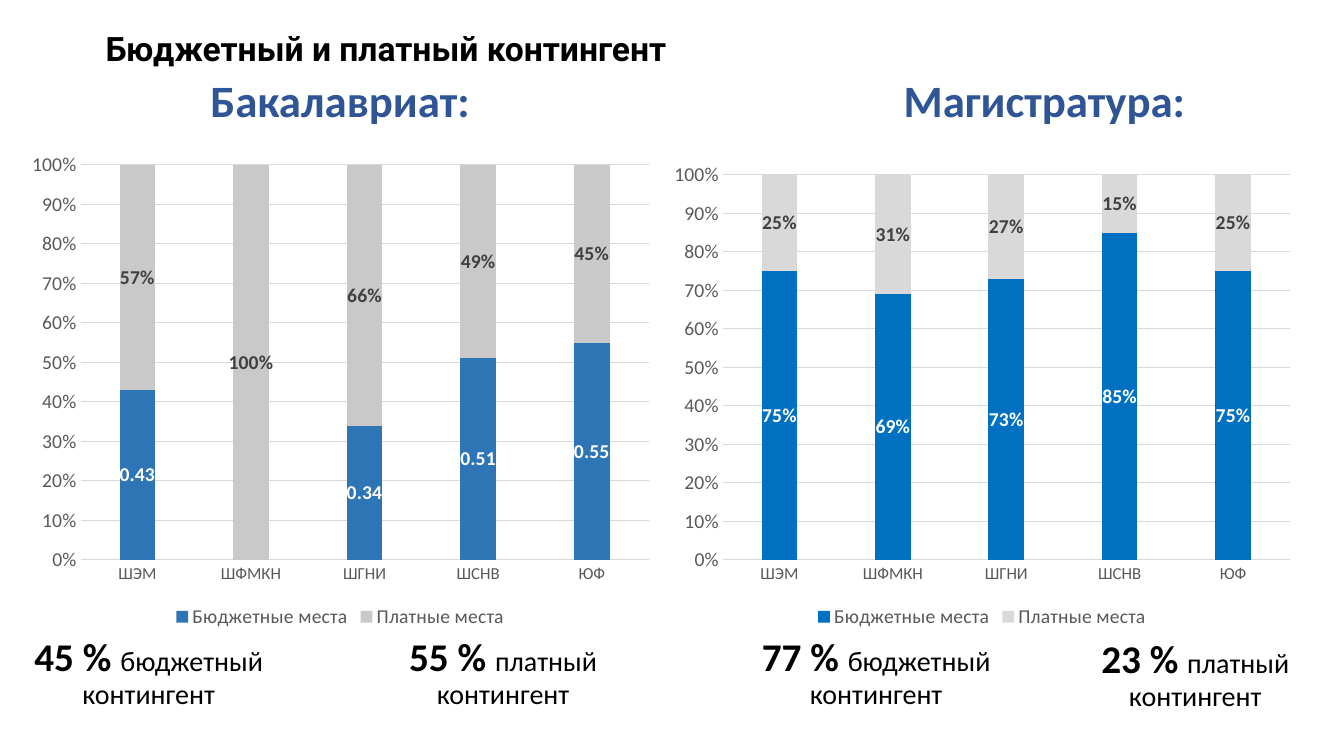
import pptx
import pptx.util
import pptx.chart.data
import pptx.dml.color
import pptx.enum.chart
import pptx.enum.text

HEADING = "Бюджетный и платный контингент"
SCHOOLS = ["ШЭМ", "ШФМКН", "ШГНИ", "ШСНВ", "ЮФ"]
SERIES = ["Бюджетные места", "Платные места"]
LEVELS = [
    {
        "title": "Бакалавриат:",
        "title_box": (1.9, 6, 63.7, 8.5),
        "chart_box": (1.9, 14.2, 63.7, 48.6),
        "budget": [0.43, 0, 0.34, 0.51, 0.55],
        "fills": ["2E75B6", "C9C9C9"],
        "formats": ["0.00;;;", "0%"],
        "totals": [
            ("45 % ", "бюджетный контингент", (0, 62.8, 29.5, 11)),
            ("55 % ", "платный контингент", (34.2, 62.8, 31.4, 11)),
        ],
    },
    {
        "title": "Магистратура:",
        "title_box": (74, 6, 59.2, 8.5),
        "chart_box": (65.6, 15.2, 63.6, 47.6),
        "budget": [0.75, 0.69, 0.73, 0.85, 0.75],
        "fills": ["0070C0", "D9D9D9"],
        "formats": ["0%", "0%"],
        "totals": [
            ("77 % ", "бюджетный контингент", (72.1, 62.8, 29.6, 11)),
            ("23 % ", "платный контингент", (104, 63, 29.1, 11)),
        ],
    },
]
HEADING_BOX = (9.5, 2.3, 88.7, 5)
CELL = 0.1

THEME = {
    "font": "Calibri", "heading_font": "Roboto",
    "text": "000000", "title": "2F5597", "axis": "595959", "grid": "D9D9D9",
    "labels": ["FFFFFF", "404040"],
    "heading_size": 24, "title_size": 32, "share_size": 28, "note_size": 20,
    "chart_size": 14, "category_size": 12,
}
ALIGN = pptx.enum.text.PP_ALIGN
ANCHOR = pptx.enum.text.MSO_ANCHOR


def place(box):
    return [pptx.util.Inches(n * CELL) for n in box]


def rgb(value):
    return pptx.dml.color.RGBColor.from_string(value)


def style(font, size, color, bold=False, name=THEME["font"]):
    font.size = pptx.util.Pt(size)
    font.name = name
    font.bold = bold
    font.color.rgb = rgb(color)


def grid_line(line):
    line.color.rgb = rgb(THEME["grid"])
    line.width = pptx.util.Pt(0.75)


def add_text(s, box, runs, align, anchor=ANCHOR.TOP, spacing=1.0, before=0):
    tf = s.shapes.add_textbox(*place(box)).text_frame
    tf.word_wrap = True
    tf.vertical_anchor = anchor
    p = tf.paragraphs[0]
    p.alignment = align
    p.line_spacing = spacing
    p.space_before = pptx.util.Pt(before)
    for text, *look in runs:
        r = p.add_run()
        r.text = text
        style(r.font, *look)


def add_level_chart(s, level):
    data = pptx.chart.data.CategoryChartData(number_format="0%")
    data.categories = SCHOOLS
    paid = [round(1 - share, 2) for share in level["budget"]]
    for name, values in zip(SERIES, (level["budget"], paid)):
        data.add_series(name, values)
    kind = pptx.enum.chart.XL_CHART_TYPE.COLUMN_STACKED_100
    chart = s.shapes.add_chart(kind, *place(level["chart_box"]), data).chart
    chart.has_title = False
    style(chart.font, THEME["chart_size"], THEME["axis"])
    chart.has_legend = True
    chart.legend.position = pptx.enum.chart.XL_LEGEND_POSITION.BOTTOM
    chart.legend.include_in_layout = False
    style(chart.legend.font, THEME["chart_size"], THEME["axis"])

    for axis, size in ((chart.category_axis, THEME["category_size"]),
                       (chart.value_axis, THEME["chart_size"])):
        axis.major_tick_mark = pptx.enum.chart.XL_TICK_MARK.NONE
        axis.minor_tick_mark = pptx.enum.chart.XL_TICK_MARK.NONE
        style(axis.tick_labels.font, size, THEME["axis"])
    grid_line(chart.category_axis.format.line)
    grid_line(chart.value_axis.major_gridlines.format.line)
    chart.value_axis.format.line.fill.background()
    chart.value_axis.tick_labels.number_format = "0%"
    chart.value_axis.tick_labels.number_format_is_linked = False

    plot = chart.plots[0]
    plot.gap_width = 219
    plot.overlap = 100
    plot.vary_by_categories = False
    for series, fill, fmt, color in zip(
            plot.series, level["fills"], level["formats"], THEME["labels"]):
        series.format.fill.solid()
        series.format.fill.fore_color.rgb = rgb(fill)
        labels = series.data_labels
        labels.show_value = True
        labels.position = pptx.enum.chart.XL_LABEL_POSITION.CENTER
        labels.number_format = fmt
        labels.number_format_is_linked = False
        style(labels.font, THEME["chart_size"], color, True)


def main():
    prs = pptx.Presentation()
    prs.slide_width = pptx.util.Inches(13.33)
    prs.slide_height = pptx.util.Inches(7.5)
    s = prs.slides.add_slide(prs.slide_layouts[6])
    add_text(s, HEADING_BOX,
             [(HEADING, THEME["heading_size"], THEME["text"], True,
               THEME["heading_font"])], ALIGN.LEFT)
    for level in LEVELS:
        add_level_chart(s, level)
        add_text(s, level["title_box"],
                 [(level["title"], THEME["title_size"], THEME["title"], True)],
                 ALIGN.CENTER, ANCHOR.MIDDLE, 0.9)
        for share, note, box in level["totals"]:
            add_text(s, box,
                     [(share, THEME["share_size"], THEME["text"], True),
                      (note, THEME["note_size"], THEME["text"])],
                     ALIGN.CENTER, spacing=0.9, before=10)
    prs.save("out.pptx")


if __name__ == "__main__":
    main()
